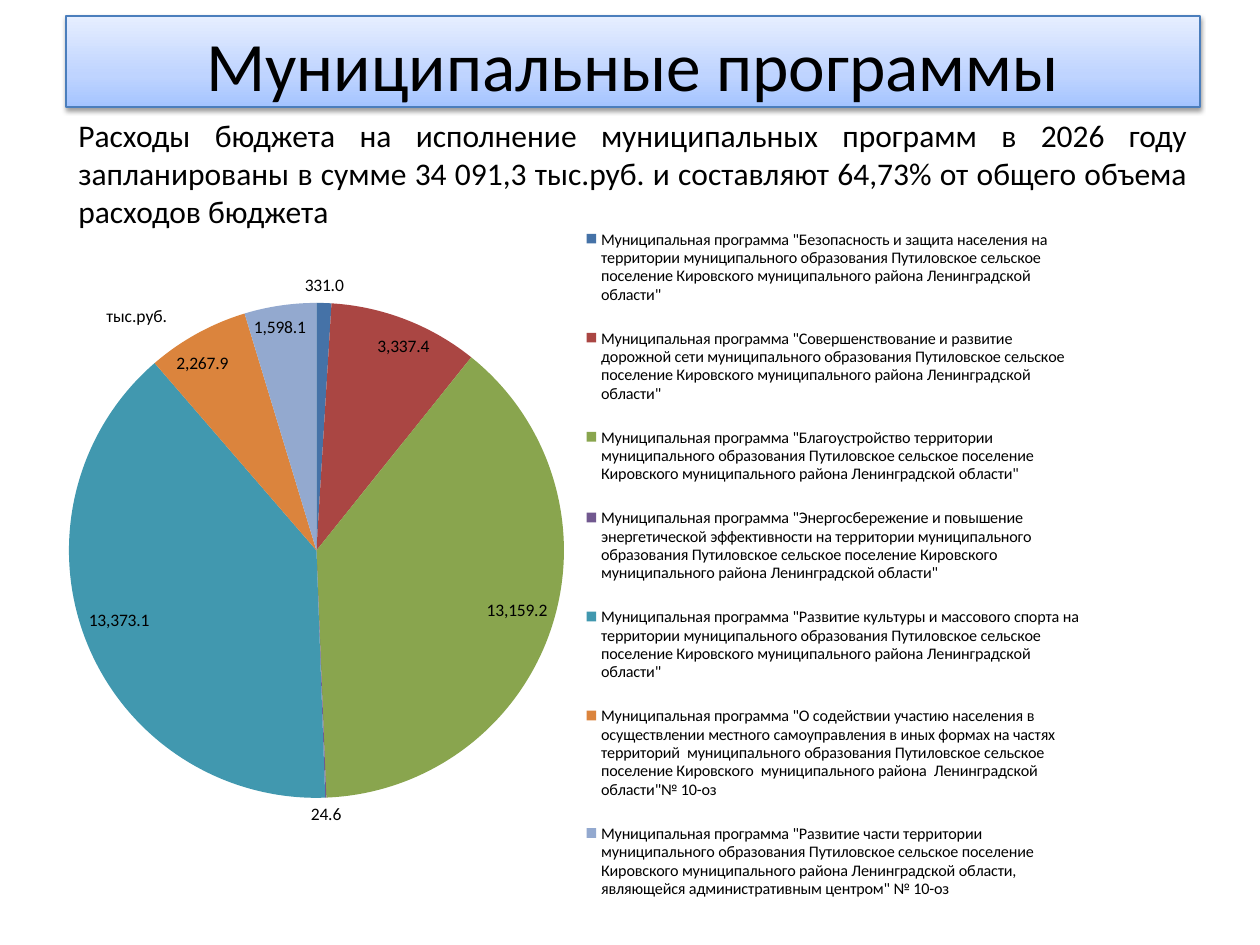
from copy import deepcopy

from lxml import etree
from pptx import Presentation
from pptx.chart.data import CategoryChartData
from pptx.dml.color import RGBColor
from pptx.enum.chart import XL_CHART_TYPE, XL_LABEL_POSITION, XL_LEGEND_POSITION
from pptx.enum.shapes import MSO_SHAPE
from pptx.enum.text import MSO_ANCHOR, PP_ALIGN
from pptx.oxml import parse_xml
from pptx.oxml.ns import nsdecls, qn
from pptx.util import Pt

FONT = "Calibri"
BLACK = RGBColor(0x00, 0x00, 0x00)
BORDER = RGBColor(0x4B, 0x7E, 0xBC)
BANNER_STOPS = [
    (0, RGBColor(0xA4, 0xC4, 0xFF)),
    (0.35, RGBColor(0xBF, 0xD4, 0xFF)),
    (1, RGBColor(0xE6, 0xEE, 0xFF)),
]

TITLE = "Муниципальные программы"
SUMMARY = (
    "Расходы бюджета на исполнение муниципальных программ в 2026 году запланированы "
    "в сумме 34 091,3 тыс.руб. и составляют 64,73% от общего объема расходов бюджета"
)
UNIT = "тыс.руб."

# Name, amount and slice colour of each programme
PROGRAMMES = [
    ('Муниципальная программа "Безопасность и защита населения на территории '
     'муниципального образования Путиловское сельское поселение Кировского '
     'муниципального района Ленинградской области"',
     331.0, RGBColor(0x45, 0x72, 0xA7)),
    ('Муниципальная программа "Совершенствование и развитие дорожной сети '
     'муниципального образования Путиловское сельское поселение Кировского '
     'муниципального района Ленинградской области"',
     3337.4, RGBColor(0xAA, 0x46, 0x43)),
    ('Муниципальная программа "Благоустройство территории муниципального '
     'образования Путиловское сельское поселение Кировского муниципального '
     'района Ленинградской области"',
     13159.2, RGBColor(0x89, 0xA5, 0x4E)),
    ('Муниципальная программа "Энергосбережение и повышение энергетической '
     'эффективности на территории муниципального образования Путиловское '
     'сельское поселение Кировского муниципального района Ленинградской области"',
     24.6, RGBColor(0x71, 0x58, 0x8F)),
    ('Муниципальная программа "Развитие культуры и массового спорта на территории '
     'муниципального образования Путиловское сельское поселение Кировского '
     'муниципального района Ленинградской области"',
     13373.1, RGBColor(0x41, 0x98, 0xAF)),
    ('Муниципальная программа "О содействии участию населения в  осуществлении '
     'местного самоуправления в иных формах на частях территорий  муниципального '
     'образования Путиловское сельское поселение Кировского  муниципального '
     'района  Ленинградской области"№ 10-оз',
     2267.9, RGBColor(0xDB, 0x84, 0x3D)),
    ('Муниципальная программа "Развитие части территории муниципального '
     'образования Путиловское сельское поселение Кировского муниципального '
     'района Ленинградской области, являющейся административным центром" № 10-оз',
     1598.1, RGBColor(0x93, 0xA9, 0xCF)),
]


def px(length):
    return round(length * 914400 / 126)


def style_font(font, size):
    font.name = FONT
    font.size = Pt(size)
    font.color.rgb = BLACK


def write_text(frame, text, size, align):
    frame.word_wrap = True
    para = frame.paragraphs[0]
    para.text = text
    para.alignment = align
    for span in para.runs:
        style_font(span.font, size)


def add_banner(page, box):
    banner = page.shapes.add_shape(MSO_SHAPE.RECTANGLE, *map(px, box))
    banner.line.color.rgb = BORDER
    banner.line.width = Pt(0.75)

    # Three-stop vertical gradient
    fill = banner.fill
    fill.gradient()
    fill.gradient_angle = 90
    stop_list = banner.element.spPr.find(".//" + qn("a:gsLst"))
    stop_list.append(deepcopy(stop_list[0]))
    for stop, (position, color) in zip(fill.gradient_stops, BANNER_STOPS):
        stop.position = position
        stop.color.rgb = color

    # Soft shadow below
    banner.shadow.inherit = False
    effects = banner.element.spPr.find(qn("a:effectLst"))
    effects.append(parse_xml(
        f'<a:outerShdw {nsdecls("a")} blurRad="{Pt(3.1)}" dist="{Pt(1.6)}" '
        'dir="5400000" rotWithShape="0"><a:srgbClr val="000000">'
        '<a:alpha val="38000"/></a:srgbClr></a:outerShdw>'))

    frame = banner.text_frame
    frame.margin_top = px(10)
    frame.vertical_anchor = MSO_ANCHOR.MIDDLE
    write_text(frame, TITLE, 39.6, PP_ALIGN.CENTER)


def add_caption(page, box, text, size, align):
    caption = page.shapes.add_textbox(*map(px, box))
    write_text(caption.text_frame, text, size, align)


def set_layout(parent, box, part, inner=False):
    """Place part (left, top, width, height) inside the chart box, all in px."""
    left, top, width, height = part
    values = {
        "xMode": "edge", "yMode": "edge",
        "x": round(left / box[2], 4), "y": round(top / box[3], 4),
        "w": round(width / box[2], 4), "h": round(height / box[3], 4),
    }
    if inner:
        values = {"layoutTarget": "inner", **values}
    for old in parent.findall(qn("c:layout")):
        parent.remove(old)
    layout = parse_xml(f'<c:layout {nsdecls("c")}/>')
    manual = etree.SubElement(layout, qn("c:manualLayout"))
    for name, value in values.items():
        etree.SubElement(manual, qn("c:" + name)).set("val", str(value))
    if inner:
        parent.insert(0, layout)
    else:
        parent.find(qn("c:legendPos")).addnext(layout)


def add_programme_pie(page, box):
    data = CategoryChartData(number_format="#,##0.0")
    data.categories = [name for name, _, _ in PROGRAMMES]
    data.add_series("Series 1", [amount for _, amount, _ in PROGRAMMES])
    chart = page.shapes.add_chart(XL_CHART_TYPE.PIE, *map(px, box), data).chart
    chart.has_title = False
    style_font(chart.font, 10)

    plot = chart.plots[0]
    plot.vary_by_categories = True
    series = plot.series[0]
    labels = series.data_labels
    labels.show_value = True
    labels.number_format = "#,##0.0"
    labels.number_format_is_linked = False
    labels.position = XL_LABEL_POSITION.BEST_FIT
    style_font(labels.font, 10)
    for index, (_, _, color) in enumerate(PROGRAMMES):
        fill = series.points[index].format.fill
        fill.solid()
        fill.fore_color.rgb = color

    chart.has_legend = True
    legend = chart.legend
    legend.position = XL_LEGEND_POSITION.RIGHT
    legend.include_in_layout = False
    style_font(legend.font, 9.2)

    plot_area = chart.element.find(".//" + qn("c:plotArea"))
    set_layout(plot_area, box, (10, 114, 495, 517), inner=True)
    set_layout(chart.element.find(".//" + qn("c:legend")), box, (525, 27, 497, 719))


def main():
    deck = Presentation()
    deck.slide_width, deck.slide_height = px(1260), px(945)
    page = deck.slides.add_slide(deck.slide_layouts[6])
    add_banner(page, (66, 16, 1134, 91))
    add_caption(page, (66, 110, 1134, 127), SUMMARY, 18, PP_ALIGN.JUSTIFY)
    add_caption(page, (94, 299, 90, 34), UNIT, 10, PP_ALIGN.LEFT)
    add_programme_pie(page, (59, 178, 1162, 804))
    deck.save("out.pptx")


if __name__ == "__main__":
    main()
